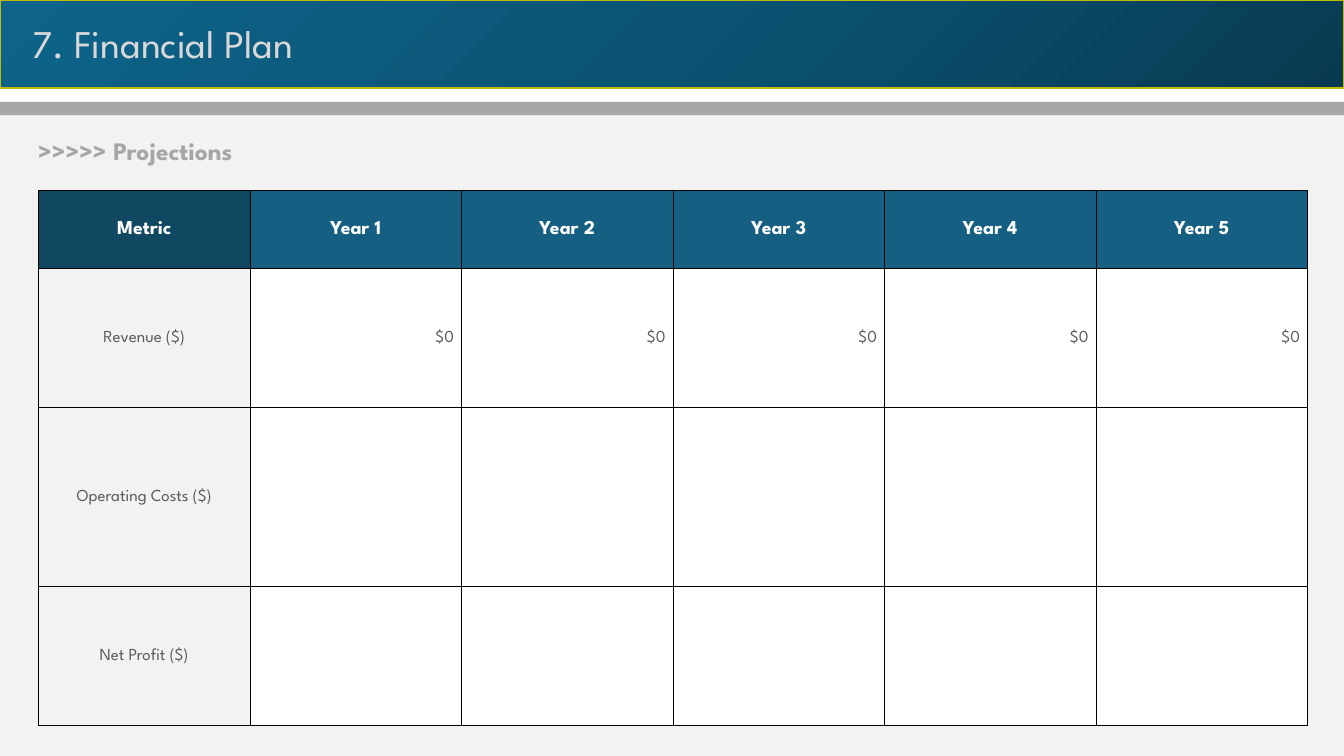
from copy import deepcopy

from lxml import etree
from pptx import Presentation
from pptx.dml.color import RGBColor
from pptx.enum.shapes import MSO_SHAPE
from pptx.enum.text import MSO_ANCHOR, PP_ALIGN
from pptx.oxml.ns import qn
from pptx.util import Cm, Pt

RECT = MSO_SHAPE.RECTANGLE
MIDDLE = MSO_ANCHOR.MIDDLE
LEFT, CENTER, RIGHT = PP_ALIGN.LEFT, PP_ALIGN.CENTER, PP_ALIGN.RIGHT


def color(code):
    return RGBColor.from_string(code)


class Deck:
    """Holds the style and the current slide."""

    font = "League Spartan"
    wide, high = 33.87, 19.05

    def __init__(self):
        self.show = Presentation()
        self.show.slide_width = Cm(self.wide)
        self.show.slide_height = Cm(self.high)
        self.slide = self.show.slides.add_slide(self.show.slide_layouts[6])

    def words(self, frame, text, size, tint, bold=False, align=LEFT):
        para = frame.paragraphs[0]
        para.alignment = align
        run = para.add_run()
        run.text = text
        look = {"name": self.font, "size": Pt(size), "bold": bold}
        for key, value in look.items():
            setattr(run.font, key, value)
        run.font.color.rgb = color(tint)

    def bar(self, top, height, tint):
        shape = self.slide.shapes.add_shape(RECT, 0, Cm(top), Cm(self.wide), Cm(height))
        shape.shadow.inherit = False
        shape.fill.solid()
        shape.fill.fore_color.rgb = color(tint)
        shape.line.fill.background()
        return shape

    def banner(self, height, tints, edge):
        shape = self.bar(0, height, tints[0])
        shape.fill.gradient()
        shape.fill.gradient_angle = 135
        stops = next(shape.element.iter(qn("a:gsLst")))
        for _ in tints[2:]:
            stops.insert(1, deepcopy(stops[0]))
        for i, (stop, tint) in enumerate(zip(shape.fill.gradient_stops, tints)):
            stop.position = i / (len(tints) - 1)
            stop.color.rgb = color(tint)
        shape.line.color.rgb = color(edge)
        shape.line.width = Pt(1.5)

    def label(self, box, text, size, tint, bold=False):
        frame = self.slide.shapes.add_textbox(*map(Cm, box)).text_frame
        frame.word_wrap = True
        self.words(frame, text, size, tint, bold)

    def border(self, cell):
        props = cell._tc.get_or_add_tcPr()
        for i, side in enumerate(("lnL", "lnR", "lnT", "lnB")):
            line = etree.Element(qn("a:" + side), w=str(Pt(0.5)))
            fill = etree.SubElement(line, qn("a:solidFill"))
            etree.SubElement(fill, qn("a:srgbClr"), val="000000")
            props.insert(i, line)

    def cell(self, cell, text, row, col):
        look = {"vertical_anchor": MIDDLE, "margin_left": Cm(0.19), "margin_right": Cm(0.19),
                "margin_top": Cm(0.13), "margin_bottom": Cm(0.13)}
        for key, value in look.items():
            setattr(cell, key, value)
        head = row == 0
        if head or col:
            cell.fill.solid()
            tint = ("156082" if col else "104862") if head else "FFFFFF"
            cell.fill.fore_color.rgb = color(tint)
        else:
            cell.fill.background()
        self.border(cell)
        if text:
            size, tint = (14, "FFFFFF") if head else (12, "595959")
            align = CENTER if head or not col else RIGHT
            self.words(cell.text_frame, text, size, tint, head, align)

    def table(self, left, top, width, heights, rows):
        count = len(rows[0])
        box = map(Cm, (left, top, width, sum(heights)))
        grid = self.slide.shapes.add_table(len(rows), count, *box).table
        grid.horz_banding = False
        for col in grid.columns:
            col.width = Cm(width / count)
        for r, (height, texts) in enumerate(zip(heights, rows)):
            grid.rows[r].height = Cm(height)
            for c, text in enumerate(texts):
                self.cell(grid.cell(r, c), text, r, c)


def main():
    deck = Deck()
    deck.banner(2.22, ["083B52", "0B5474", "0D638A"], "C3BA05")
    deck.label((0.56, 0.36, 20.52, 1.45), "7. Financial Plan", 28, "D9D9D9")
    deck.bar(2.72, 16.33, "F2F2F2")
    deck.label((0.71, 3.28, 17.65, 1.02), ">>>>> Projections", 18, "A6A6A6", True)
    deck.bar(2.57, 0.33, "A6A6A6")
    years = range(1, 6)
    rows = [
        ["Metric"] + [f"Year {year}" for year in years],
        ["Revenue ($)"] + ["$0" for _ in years],
        ["Operating Costs ($)"] + ["" for _ in years],
        ["Net Profit ($)"] + ["" for _ in years],
    ]
    deck.table(0.97, 4.8, 31.98, [1.97, 3.5, 4.51, 3.5], rows)
    deck.show.save("out.pptx")


if __name__ == "__main__":
    main()
